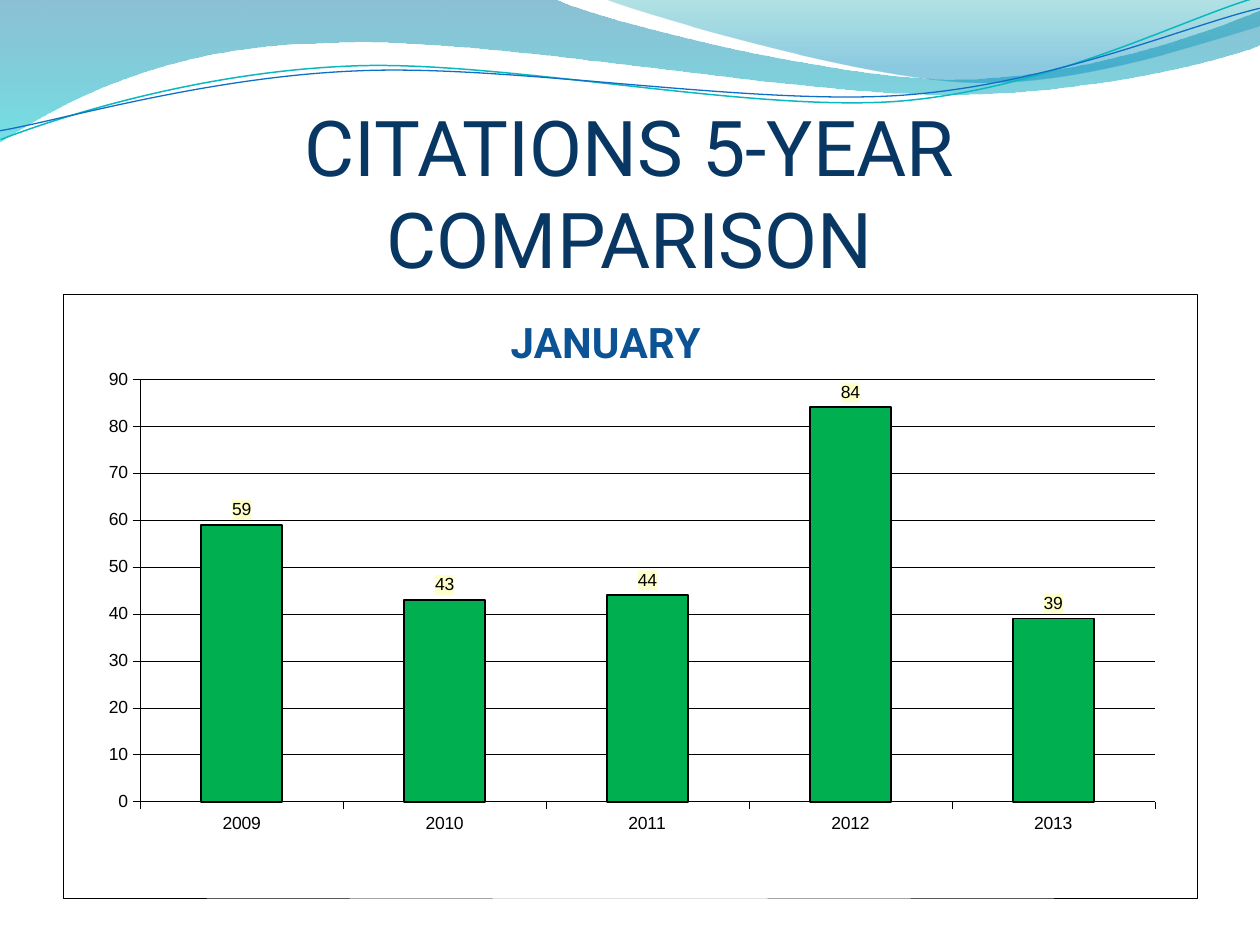
from lxml import etree
from pptx import Presentation
from pptx.chart.data import CategoryChartData
from pptx.dml.color import RGBColor
from pptx.enum.chart import (XL_CHART_TYPE as ChartType, XL_LABEL_POSITION as LabelPosition,
                             XL_TICK_LABEL_POSITION as TickLabels, XL_TICK_MARK as TickMark)
from pptx.enum.text import MSO_ANCHOR as Anchor, PP_ALIGN as Align
from pptx.oxml import parse_xml
from pptx.oxml.ns import nsdecls, qn
from pptx.util import Pt

EMU_PER_PX = 914400 / 126
SLIDE_WIDTH, SLIDE_HEIGHT = 1260, 945
STRAND_ROTATION = 357.3

# A path is a start point, then lines (one point) and Bézier curves (three points).
WAVES = [
    ([[(0, 0)], [(554, -1)],
      [(600, 21), (837, 79), (955, 79)], [(1075, 79), (1207, 33), (1260, 11)],
      [(1261, 45)],
      [(1239, 55), (1096, 96), (940, 94)], [(783, 94), (481, 35), (324, 43)],
      [(163, 45), (58, 105), (-1, 142)]],
     [(0, "0074A1", 45), (1, "00C6CF", 55)]),
    ([[(604, -1)],
      [(641, 14), (859, 78), (969, 82)], [(1077, 87), (1211, 40), (1260, 26)],
      [(1260, 0)]],
     [(0, "00A1A9", 30), (0.8, "008BBF", 45)]),
]
STRANDS = [
    ([[(-2, 110)], [(58, 90), (199, 52), (350, 53)],
      [(499, 53), (745, 118), (896, 114)], [(1049, 109), (1184, 45), (1260, 27)]],
     "0AB8BF", 0.85),
    ([[(-2, 101)], [(57, 94), (207, 57), (357, 58)],
      [(509, 58), (750, 112), (902, 108)], [(1052, 104), (1187, 52), (1262, 38)]],
     "0F6FC6", 0.75),
]
CITATIONS = {"2009": 59, "2010": 43, "2011": 44, "2012": 84, "2013": 39}


def px(*lengths):
    return [round(length * EMU_PER_PX) for length in lengths]


def color(hex_code):
    return RGBColor.from_string(hex_code)


def apply(target, formats):
    for name, value in formats.items():
        setattr(target, name, value)


def set_font(font, name, size, hex_code, bold=False):
    apply(font, {"name": name, "size": Pt(size), "bold": bold})
    font.color.rgb = color(hex_code)


def set_line(line, hex_code, width):
    line.color.rgb = color(hex_code)
    line.width = Pt(width)


def add_outline(slide, left, top, segments, close):
    """Join the segment ends by lines, then bend those that have control points."""
    paths = [[px(left + x, top + y) for x, y in segment] for segment in segments]
    builder = slide.shapes.build_freeform(*paths[0][0])
    builder.add_line_segments([segment[-1] for segment in paths[1:]], close=close)
    shape = builder.convert_to_shape()
    shape.shadow.inherit = False
    lines = list(shape.element.spPr.iter(qn("a:lnTo")))
    for line, segment in zip(lines, paths[1:]):
        if len(segment) == 3:
            line.tag = qn("a:cubicBezTo")
            for index, (x, y) in enumerate(segment[:2]):
                point = line.makeelement(qn("a:pt"), x=str(x - shape.left), y=str(y - shape.top))
                line.insert(index, point)
    return shape


def add_header_waves(slide, left, top):
    for segments, stops in WAVES:
        shape = add_outline(slide, left, top, segments, close=True)
        shape.line.fill.background()
        shape.fill.gradient()
        shape.fill.gradient_angle = 270
        for stop, (position, hex_code, opacity) in zip(shape.fill.gradient_stops, stops):
            stop.position = position
            stop.color.rgb = color(hex_code)
        for element, stop in zip(shape.element.spPr.iter(qn("a:srgbClr")), stops):
            etree.SubElement(element, qn("a:alpha"), val=str(stop[2] * 1000))
    for segments, hex_code, width in STRANDS:
        shape = add_outline(slide, left, top, segments, close=False)
        shape.rotation = STRAND_ROTATION
        shape.fill.background()
        set_line(shape.line, hex_code, width)


def add_title(slide, left, top, width, height):
    frame = slide.shapes.add_textbox(*px(left, top, width, height)).text_frame
    apply(frame, {"word_wrap": True, "vertical_anchor": Anchor.BOTTOM, "margin_left": 0,
                  "margin_right": 0, "margin_top": Pt(3.6), "margin_bottom": 0})
    paragraph = frame.paragraphs[0]
    paragraph.text = "CITATIONS 5-YEAR\vCOMPARISON"
    paragraph.alignment = Align.CENTER
    for run in paragraph.runs:
        set_font(run.font, "Roboto", 44, "083763")


def set_layout(parent, index, fractions, target=""):
    """Place a chart part by hand, in fractions of the chart's size."""
    for old in parent.findall(qn("c:layout")):
        parent.remove(old)
    modes = '<c:xMode val="edge"/><c:yMode val="edge"/>'
    sizes = "".join(f'<c:{name} val="{value:.4f}"/>' for name, value in zip("xywh", fractions))
    parent.insert(index, parse_xml(
        f'<c:layout {nsdecls("c")}><c:manualLayout>{target}{modes}{sizes}'
        '</c:manualLayout></c:layout>'))


def shape_properties(fill, line='<a:ln><a:noFill/></a:ln>'):
    return parse_xml(f'<c:spPr {nsdecls("c", "a")}><a:solidFill><a:srgbClr val="{fill}"/>'
                     f'</a:solidFill>{line}</c:spPr>')


def add_citations_chart(slide, left, top, width, height):
    data = CategoryChartData()
    data.categories = list(CITATIONS)
    data.add_series("Series 1", list(CITATIONS.values()))
    chart = slide.shapes.add_chart(ChartType.COLUMN_CLUSTERED,
                                   *px(left, top, width, height), data).chart
    chart.has_legend = False
    set_font(chart.font, "Arial", 10, "000000")
    chart_element = chart.element.find(qn("c:chart"))
    chart_element.addnext(shape_properties(
        "FFFFFF", '<a:ln w="3175"><a:solidFill><a:srgbClr val="000000"/></a:solidFill></a:ln>'))

    title_frame = chart.chart_title.text_frame
    title_frame.text = "JANUARY"
    set_font(title_frame.paragraphs[0].runs[0].font, "Roboto", 24, "0B5394", bold=True)
    set_layout(chart_element.find(qn("c:title")), 1, (440 / width, 12 / height))
    set_layout(chart_element.find(qn("c:plotArea")), 0,
               (77 / width, 85 / height, 1015 / width, 423 / height),
               '<c:layoutTarget val="inner"/>')

    for axis in (chart.category_axis, chart.value_axis):
        apply(axis, {"major_tick_mark": TickMark.OUTSIDE, "minor_tick_mark": TickMark.NONE})
        set_line(axis.format.line, "000000", 0.25)
        set_font(axis.tick_labels.font, "Arial", 10, "000000")
    chart.category_axis.tick_label_position = TickLabels.LOW
    apply(chart.value_axis, {"minimum_scale": 0, "maximum_scale": 90, "major_unit": 10,
                             "has_major_gridlines": True})
    set_line(chart.value_axis.major_gridlines.format.line, "000000", 0.25)

    plot = chart.plots[0]
    apply(plot, {"gap_width": 150, "vary_by_categories": False})
    series = plot.series[0]
    series.format.fill.solid()
    series.format.fill.fore_color.rgb = color("00B050")
    set_line(series.format.line, "000000", 1)
    labels = series.data_labels
    apply(labels, {"show_value": True, "position": LabelPosition.OUTSIDE_END})
    set_font(labels.font, "Arial", 10, "000000")
    label_text = next(chart_element.iter(qn("c:dLbls"))).find(qn("c:txPr"))
    label_text.addprevious(shape_properties("FFFFCC"))


def main():
    presentation = Presentation()
    presentation.slide_width, presentation.slide_height = px(SLIDE_WIDTH, SLIDE_HEIGHT)
    slide = presentation.slides.add_slide(presentation.slide_layouts[6])
    add_header_waves(slide, 0, 0)
    add_title(slide, 63, 126, 1134, 158)
    add_citations_chart(slide, 63, 294, 1134, 604)
    presentation.save("out.pptx")


if __name__ == "__main__":
    main()
